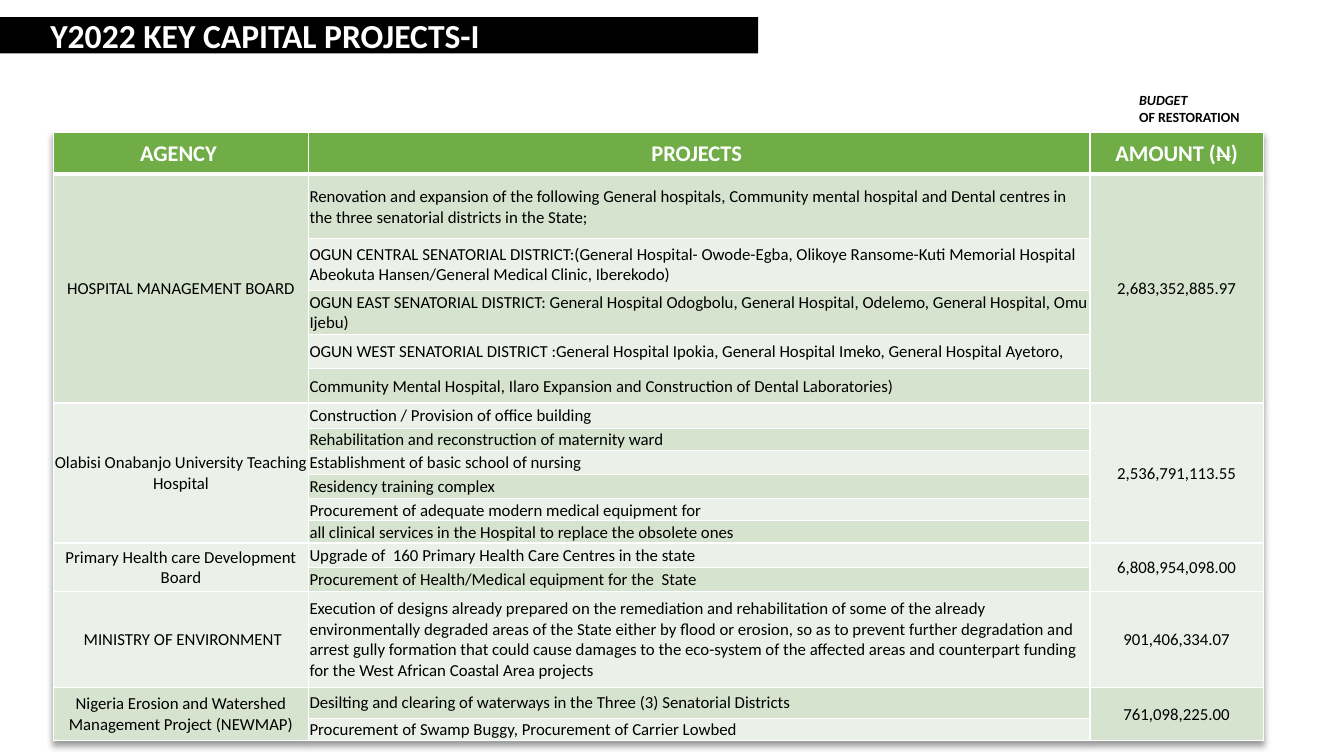
from lxml.etree import SubElement
from pptx import Presentation
from pptx.dml.color import RGBColor
from pptx.enum.shapes import MSO_SHAPE
from pptx.enum.text import MSO_ANCHOR, MSO_AUTO_SIZE, PP_ALIGN
from pptx.oxml.ns import qn
from pptx.util import Inches, Pt

BLACK = RGBColor(0x00, 0x00, 0x00)
WHITE = RGBColor(0xFF, 0xFF, 0xFF)
GREEN = RGBColor(0x70, 0xAD, 0x47)
DARK_BAND = RGBColor(0xD5, 0xE3, 0xCF)
LIGHT_BAND = RGBColor(0xEB, 0xF1, 0xE9)

COLUMN_WIDTHS = (2.53, 7.75, 1.72)
HEADER_HEIGHT = 0.42
AGENCIES = [
    ("HOSPITAL MANAGEMENT BOARD", "2,683,352,885.97", [
        ("Renovation and expansion of the following General hospitals, Community mental hospital "
         "and Dental centres in the three senatorial districts in the State;", 0.64),
        ("OGUN CENTRAL SENATORIAL DISTRICT:(General Hospital- Owode-Egba, Olikoye Ransome-Kuti "
         "Memorial Hospital Abeokuta Hansen/General Medical Clinic, Iberekodo)", 0.51),
        ("OGUN EAST SENATORIAL DISTRICT: General Hospital Odogbolu, General Hospital, Odelemo, "
         "General Hospital, Omu Ijebu)", 0.44),
        ("OGUN WEST SENATORIAL DISTRICT :General Hospital Ipokia, General Hospital Imeko, "
         "General Hospital Ayetoro,", 0.34),
        ("Community Mental Hospital, Ilaro Expansion and Construction of Dental Laboratories)", 0.34),
    ]),
    ("Olabisi Onabanjo University Teaching Hospital", "2,536,791,113.55", [
        ("Construction / Provision of office building", 0.25),
        ("Rehabilitation and reconstruction of maternity ward", 0.22),
        ("Establishment of basic school of nursing", 0.24),
        ("Residency training complex", 0.24),
        ("Procurement of adequate modern medical equipment for", 0.22),
        ("all clinical services in the Hospital to replace the obsolete ones", 0.22),
    ]),
    ("Primary Health care Development Board", "6,808,954,098.00", [
        ("Upgrade of  160 Primary Health Care Centres in the state", 0.24),
        ("Procurement of Health/Medical equipment for the  State", 0.24),
    ]),
    (" MINISTRY OF ENVIRONMENT", "901,406,334.07", [
        ("Execution of designs already prepared on the remediation and rehabilitation of some of "
         "the already environmentally degraded areas of the State either by flood or erosion, so "
         "as to prevent further degradation and arrest gully formation that could cause damages "
         "to the eco-system of the affected areas and counterpart funding for the West African "
         "Coastal Area projects", 0.95),
    ]),
    ("Nigeria Erosion and Watershed Management Project (NEWMAP)", "761,098,225.00", [
        ("Desilting and clearing of waterways in the Three (3) Senatorial Districts", 0.31),
        ("Procurement of Swamp Buggy, Procurement of Carrier Lowbed", 0.22),
    ]),
]


def write(paragraph, text, size=12, color=BLACK, bold=False, italic=False, strike=False,
          align=PP_ALIGN.LEFT):
    """Add a formatted run to a paragraph."""
    paragraph.alignment = align
    run = paragraph.add_run()
    run.text = text
    font = run.font
    font.name, font.size, font.bold, font.italic = "Calibri", Pt(size), bold, italic
    font.color.rgb = color
    if strike:
        run._r.get_or_add_rPr().set("strike", "sngStrike")


def style_cell(cell, fill, top=1, bottom=1):
    """Give a cell its white borders, fill, margins and anchor."""
    properties = cell._tc.get_or_add_tcPr()
    for side, width in (("L", 1), ("R", 1), ("T", top), ("B", bottom)):
        border = SubElement(properties, qn(f"a:ln{side}"), w=str(Pt(width)))
        solid = SubElement(border, qn("a:solidFill"))
        SubElement(solid, qn("a:srgbClr"), val=str(WHITE))
    cell.fill.solid()
    cell.fill.fore_color.rgb = fill
    cell.margin_left = cell.margin_top = cell.margin_right = Inches(0.01)
    cell.margin_bottom = 0
    cell.vertical_anchor = MSO_ANCHOR.MIDDLE


def add_table_shadow(table):
    """Put a soft shadow below the table."""
    effects = SubElement(table._tbl.tblPr, qn("a:effectLst"))
    shadow = SubElement(effects, qn("a:outerShdw"), blurRad=str(Pt(4)), dist=str(Pt(3)),
                        dir="5400000", algn="t", rotWithShape="0")
    color = SubElement(shadow, qn("a:srgbClr"), val=str(BLACK))
    SubElement(color, qn("a:alpha"), val="40000")


def add_title_bar(slide, left, top, width, height):
    """Draw the black title bar."""
    bar = slide.shapes.add_shape(MSO_SHAPE.ROUNDED_RECTANGLE, left, top, width, height)
    bar.adjustments[0] = 0
    bar.shadow.inherit = False
    bar.fill.solid()
    bar.fill.fore_color.rgb = BLACK
    bar.line.fill.background()
    frame = bar.text_frame
    frame.word_wrap = True
    frame.vertical_anchor = MSO_ANCHOR.MIDDLE
    title = frame.paragraphs[0]
    title._p.get_or_add_pPr().set("marL", str(Inches(0.4)))
    write(title, "Y2022 KEY CAPITAL PROJECTS-I", size=24, color=WHITE, bold=True)


def add_budget_label(slide, left, top, width, height):
    """Write the budget label above the amounts."""
    frame = slide.shapes.add_textbox(left, top, width, height).text_frame
    frame.word_wrap = True
    frame.auto_size = MSO_AUTO_SIZE.SHAPE_TO_FIT_TEXT
    write(frame.paragraphs[0], "BUDGET", size=10, bold=True, italic=True)
    write(frame.add_paragraph(), "OF RESTORATION", size=10, bold=True)


def add_projects_table(slide, left, top):
    """Build the table of projects grouped by agency."""
    heights = [HEADER_HEIGHT] + [height for _, _, projects in AGENCIES for _, height in projects]
    table = slide.shapes.add_table(len(heights), len(COLUMN_WIDTHS), left, top,
                                   Inches(sum(COLUMN_WIDTHS)), Inches(sum(heights))).table
    for column, width in zip(table.columns, COLUMN_WIDTHS):
        column.width = Inches(width)
    for index, (row, height) in enumerate(zip(table.rows, heights)):
        row.height = Inches(height)
        band = GREEN if index == 0 else DARK_BAND if index % 2 else LIGHT_BAND
        for cell in row.cells:
            style_cell(cell, band, top=3 if index == 1 else 1, bottom=3 if index == 0 else 1)
    add_table_shadow(table)

    headings = (["AGENCY "], ["PROJECTS "], ["AMOUNT (", "N", ")"])
    for column, parts in enumerate(headings):
        heading = table.cell(0, column).text_frame.paragraphs[0]
        for part in parts:
            write(heading, part, size=16, color=WHITE, bold=True, strike=part == "N",
                  align=PP_ALIGN.CENTER)

    first = 1
    for agency, amount, projects in AGENCIES:
        last = first + len(projects) - 1
        for column, text in ((0, agency), (2, amount)):
            cell = table.cell(first, column)
            if last > first:
                cell.merge(table.cell(last, column))
            write(cell.text_frame.paragraphs[0], text, align=PP_ALIGN.CENTER)
        for index, (project, _) in enumerate(projects, first):
            write(table.cell(index, 1).text_frame.paragraphs[0], project)
        first = last + 1


def main():
    """Build and save the slide."""
    deck = Presentation()
    deck.slide_width, deck.slide_height = Inches(13.33), Inches(7.5)
    slide = deck.slides.add_slide(deck.slide_layouts[6])
    add_budget_label(slide, Inches(11.2), Inches(0.86), Inches(1.47), Inches(0.45))
    add_projects_table(slide, Inches(0.53), Inches(1.31))
    add_title_bar(slide, Inches(0), Inches(0.17), Inches(7.52), Inches(0.36))
    deck.save("out.pptx")


if __name__ == "__main__":
    main()
